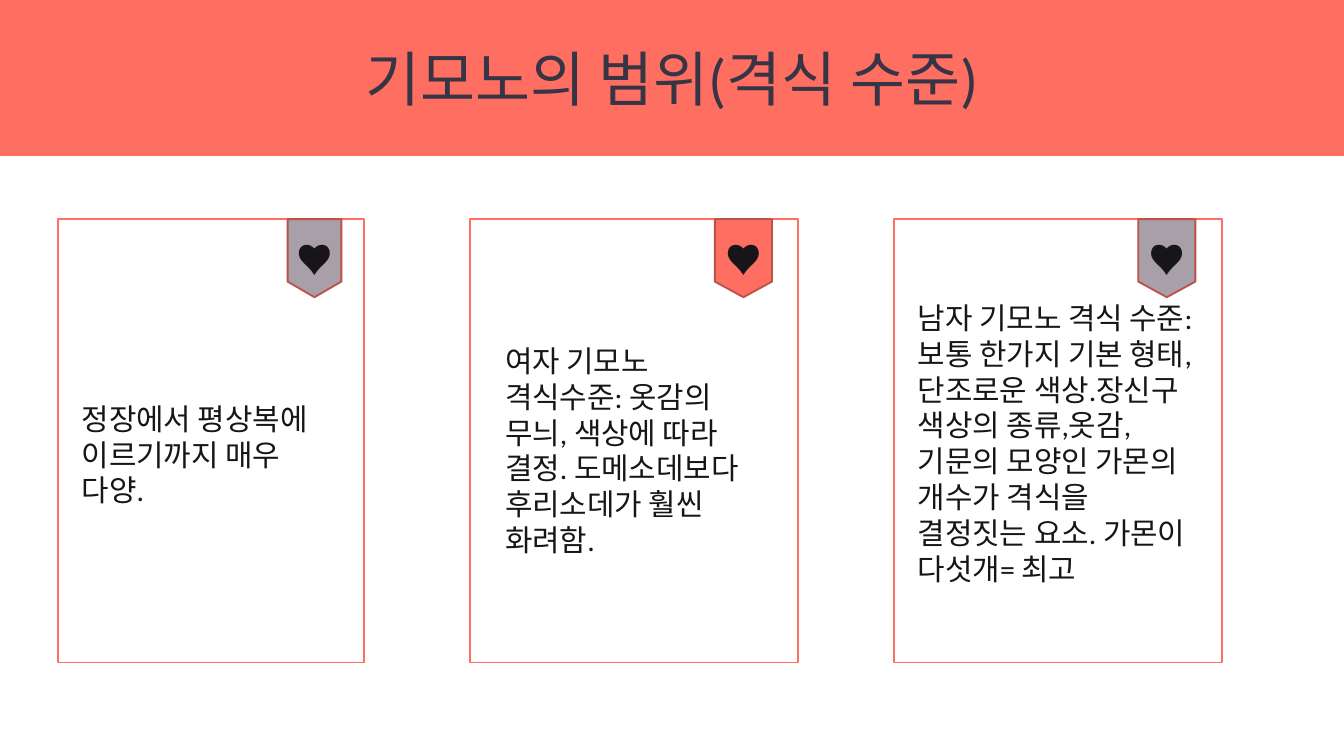
"""Builds a slide with a title band and three bookmarked cards on kimono formality."""
from pptx import Presentation
from pptx import util as u
from pptx.dml import color
from pptx.enum import shapes, text

COLORS = {
    "coral": "FF6F61",
    "coral_edge": "BD5248",
    "mauve": "A89FA8",
    "white": "FFFFFF",
    "title": "373545",
    "ink": "171517",
}
FONT = "Calibri"
CARD_TOP, CARD_HEIGHT = 117.4, 237.6
RIBBON_HEIGHT = 41.8
HEART_TOP, HEART_WIDTH, HEART_HEIGHT = 123.1, 32.4, 28.8

# card left, card width, ribbon left, ribbon width, ribbon colour
CARDS = [
    (31, 164.2, 154.1, 28.8, "mauve"),
    (252, 175.7, 383, 30.6, "coral"),
    (478.8, 175.7, 609.8, 30.6, "mauve"),
]
# left, top, width, height, wording
DESCRIPTIONS = [
    (36.7, 211, 153.4, 79.9, "정장에서 평상복에 이르기까지 매우 다양."),
    (263.5, 180, 149.8, 143.3,
     "여자 기모노 격식수준: 옷감의 무늬, 색상에 따라 결정. "
     "도메소데보다 후리소데가 훨씬 화려함."),
    (484.6, 157, 164.2, 181.4,
     "남자 기모노 격식 수준: 보통 한가지 기본 형태,단조로운 색상."
     "장신구 색상의 종류,옷감, 기문의 모양인 가몬의 개수가 "
     "격식을 결정짓는 요소. 가몬이 다섯개= 최고"),
]


def rgb(name):
    """Return the named colour."""
    return color.RGBColor.from_string(COLORS[name])


def add_block(parent, kind, box, fill, edge=None):
    """Add a flat preset shape with an optional one-point outline."""
    block = parent.add_shape(kind, *map(u.Pt, box))
    block.shadow.inherit = False
    block.fill.solid()
    block.fill.fore_color.rgb = rgb(fill)
    if edge:
        block.line.color.rgb = rgb(edge)
        block.line.width = u.Pt(1)
    else:
        block.line.fill.background()
    return block


def write(frame, wording, size, ink):
    """Put one paragraph into a text frame and return the paragraph."""
    paragraph = frame.paragraphs[0]
    paragraph.text = wording
    paragraph.font.name = FONT
    paragraph.font.size = u.Pt(size)
    paragraph.font.color.rgb = rgb(ink)
    return paragraph


def add_title_band(slide):
    """Add the full-width band with the centred title."""
    band = add_block(slide.shapes, shapes.MSO_SHAPE.RECTANGLE, (0, 0, 720, 83.5), "coral")
    band.text_frame.vertical_anchor = text.MSO_ANCHOR.MIDDLE
    title = write(band.text_frame, "기모노의 범위(격식 수준)", 32, "title")
    title.alignment = text.PP_ALIGN.CENTER


def add_card(slide, left, width, ribbon_left, ribbon_width, ribbon_fill):
    """Add an outlined card grouped with its ribbon."""
    card = slide.shapes.add_group_shape().shapes
    add_block(card, shapes.MSO_SHAPE.RECTANGLE,
              (left, CARD_TOP, width, CARD_HEIGHT), "white", "coral")
    add_block(card, shapes.MSO_SHAPE.FLOWCHART_OFFPAGE_CONNECTOR,
              (ribbon_left, CARD_TOP, ribbon_width, RIBBON_HEIGHT),
              ribbon_fill, "coral_edge")


def add_label(slide, box, wording, size, wrap=True):
    """Add a left-aligned text box that grows with its text."""
    frame = slide.shapes.add_textbox(*map(u.Pt, box)).text_frame
    frame.word_wrap = wrap
    frame.auto_size = text.MSO_AUTO_SIZE.SHAPE_TO_FIT_TEXT
    write(frame, wording, size, "ink")


def main():
    """Build and save the slide."""
    deck = Presentation()
    deck.slide_width, deck.slide_height = u.Pt(720), u.Pt(405)
    slide = deck.slides.add_slide(deck.slide_layouts[6])
    add_title_band(slide)
    for card in CARDS:
        add_card(slide, *card)
    for *box, wording in DESCRIPTIONS:
        add_label(slide, box, wording, 16)
    for _, _, ribbon_left, ribbon_width, _ in CARDS:
        heart_left = ribbon_left + (ribbon_width - HEART_WIDTH) / 2
        add_label(slide, (heart_left, HEART_TOP, HEART_WIDTH, HEART_HEIGHT), "♥", 18, wrap=False)
    deck.save("out.pptx")


if __name__ == "__main__":
    main()
